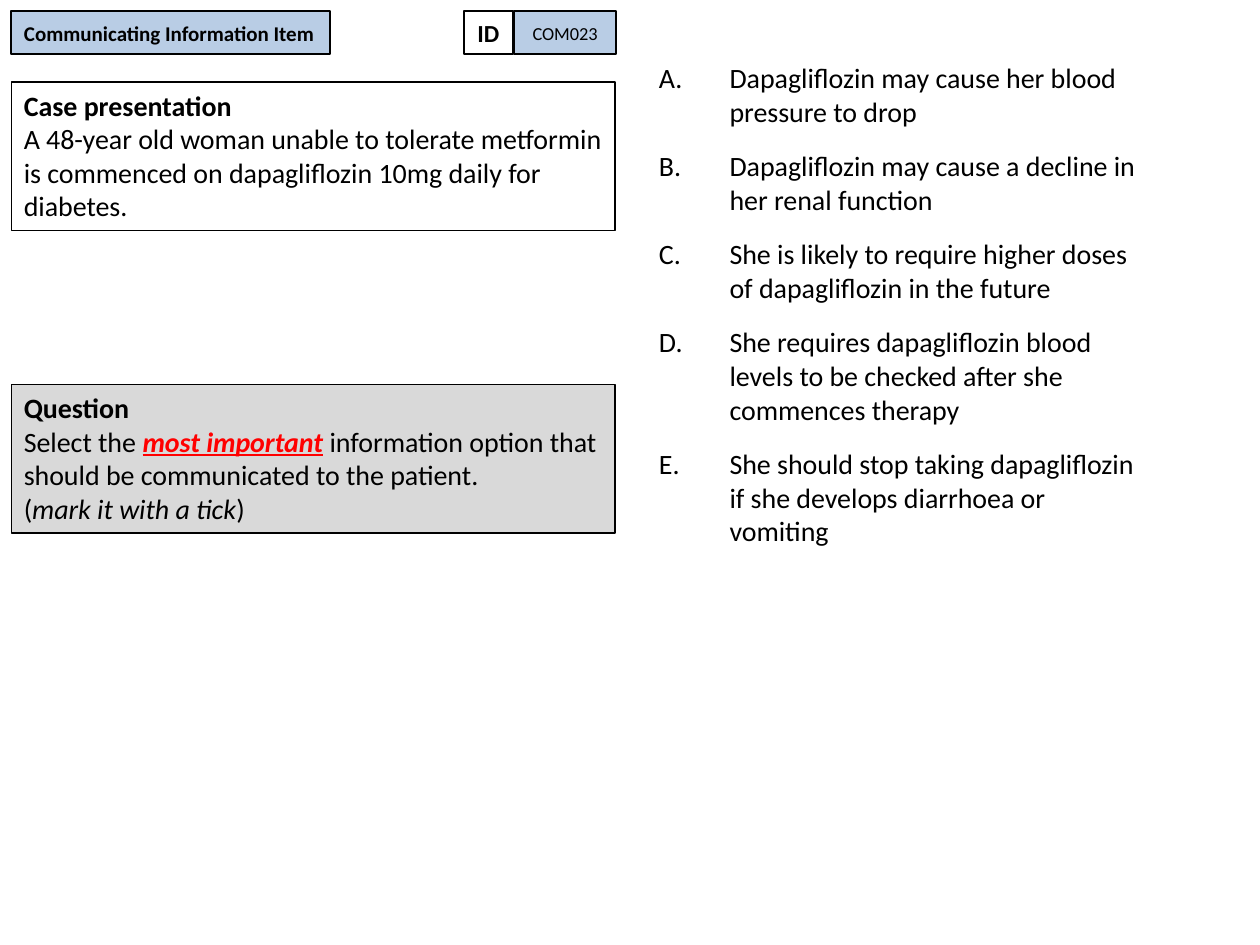
from dataclasses import dataclass

from lxml import etree
from pptx import Presentation
from pptx.dml.color import RGBColor
from pptx.enum.shapes import MSO_SHAPE
from pptx.enum.text import MSO_ANCHOR, MSO_AUTO_SIZE, PP_ALIGN
from pptx.oxml.ns import qn
from pptx.util import Inches, Pt

RECTANGLE = MSO_SHAPE.RECTANGLE
TOP, MIDDLE = MSO_ANCHOR.TOP, MSO_ANCHOR.MIDDLE
LEFT, CENTER = PP_ALIGN.LEFT, PP_ALIGN.CENTER
NO_FIT = MSO_AUTO_SIZE.NONE

BLACK = RGBColor(0x00, 0x00, 0x00)
RED = RGBColor(0xFF, 0x00, 0x00)
BLUE = RGBColor(0xB9, 0xCD, 0xE5)
GREY = RGBColor(0xD9, 0xD9, 0xD9)

FONT = "Calibri"
COLUMN = ROW = Inches(0.1)
HANGING = Inches(0.56)


@dataclass(frozen=True)
class Area:
    column: float
    row: float
    columns: float
    rows: float


@dataclass(frozen=True)
class Span:
    text: str
    bold: bool = False
    italic: bool = False
    underline: bool = False
    color: RGBColor = BLACK


@dataclass(frozen=True)
class Label:
    area: Area
    text: str
    size: float
    bold: bool = False
    fill: RGBColor | None = None


@dataclass(frozen=True)
class Panel:
    area: Area
    paragraphs: list[list[Span]]
    fill: RGBColor | None = None


TITLE = Label(Area(0.9, 0.9, 25.3, 3.4), "Communicating Information Item", 12, True, BLUE)
LABELS = [
    Label(Area(40.8, 0.9, 8.1, 3.4), "COM023", 10.5, fill=BLUE),
    Label(Area(36.8, 0.9, 3.9, 3.4), "ID", 14, True),
]
PANELS = [
    Panel(Area(0.9, 6.5, 47.9, 11.8), [
        [Span("Case presentation", bold=True)],
        [Span("A 48-year old woman unable to tolerate metformin is commenced "
              "on dapagliflozin 10mg daily for diabetes.")],
    ]),
    Panel(Area(0.9, 30.5, 47.9, 11.8), [
        [Span("Question", bold=True)],
        [Span("Select the "),
         Span("most important", bold=True, italic=True, underline=True, color=RED),
         Span(" information option that should be communicated to the patient.")],
        [Span("("), Span("mark it with a tick", italic=True), Span(")")],
    ], GREY),
]
OPTIONS_AREA = Area(51.3, 4.3, 40.4, 62.7)
OPTIONS = [
    "Dapagliflozin may cause her blood pressure to drop",
    "Dapagliflozin may cause a decline in her renal function",
    "She is likely to require higher doses of dapagliflozin in the future",
    "She requires dapagliflozin blood levels to be checked after she commences therapy",
    "She should stop taking dapagliflozin if she develops diarrhoea or vomiting",
]


def place(box, area: Area) -> None:
    box.left, box.top = round(area.column * COLUMN), round(area.row * ROW)
    box.width, box.height = round(area.columns * COLUMN), round(area.rows * ROW)


def letter(para) -> None:
    properties = para._p.get_or_add_pPr()
    properties.set("marL", str(HANGING))
    properties.set("indent", str(-HANGING))
    etree.SubElement(properties, qn("a:buFont"), typeface="+mj-lt")
    etree.SubElement(properties, qn("a:buAutoNum"), type="alphaUcPeriod")


def write(box, paragraphs: list[list[Span]], *, size: float, align=LEFT,
          anchor=TOP, gap: float = 0, lettered: bool = False) -> None:
    frame = box.text_frame
    frame.word_wrap, frame.auto_size = True, NO_FIT
    frame.vertical_anchor = anchor
    for index, spans in enumerate(paragraphs):
        para = frame.add_paragraph() if index else frame.paragraphs[0]
        if lettered:
            letter(para)
        para.alignment = align
        para.space_before = Pt(gap if index else 0)
        for span in spans:
            run = para.add_run()
            run.text = span.text
            font = run.font
            font.name, font.size = FONT, Pt(size)
            font.bold, font.italic = span.bold, span.italic
            font.underline = span.underline
            font.color.rgb = span.color


def outline(box, fill: RGBColor | None, width: float) -> None:
    if fill is None:
        box.fill.background()
    else:
        box.fill.solid()
        box.fill.fore_color.rgb = fill
    box.line.color.rgb = BLACK
    box.line.width = Pt(width)


def add_rectangle(page, area: Area):
    box = page.shapes.add_shape(RECTANGLE, 0, 0, COLUMN, ROW)
    place(box, area)
    box.shadow.inherit = False
    return box


def fill_label(box, label: Label, align=CENTER) -> None:
    outline(box, label.fill, 1)
    write(box, [[Span(label.text, bold=label.bold)]], size=label.size,
          align=align, anchor=MIDDLE)


def draw_panel(page, panel: Panel) -> None:
    box = add_rectangle(page, panel.area)
    outline(box, panel.fill, 0.75)
    box.text_frame.margin_right = Inches(0.09)
    write(box, panel.paragraphs, size=16)


def main() -> None:
    deck = Presentation()
    deck.slide_width, deck.slide_height = Inches(10), Inches(7.5)
    page = deck.slides.add_slide(deck.slide_layouts[1])

    title, options = page.shapes.title, page.placeholders[1]
    place(title, TITLE.area)
    fill_label(title, TITLE, LEFT)
    place(options, OPTIONS_AREA)
    write(options, [[Span(text)] for text in OPTIONS], size=16, gap=12, lettered=True)

    for label in LABELS:
        fill_label(add_rectangle(page, label.area), label)
    for panel in PANELS:
        draw_panel(page, panel)
    deck.save("out.pptx")


if __name__ == "__main__":
    main()
